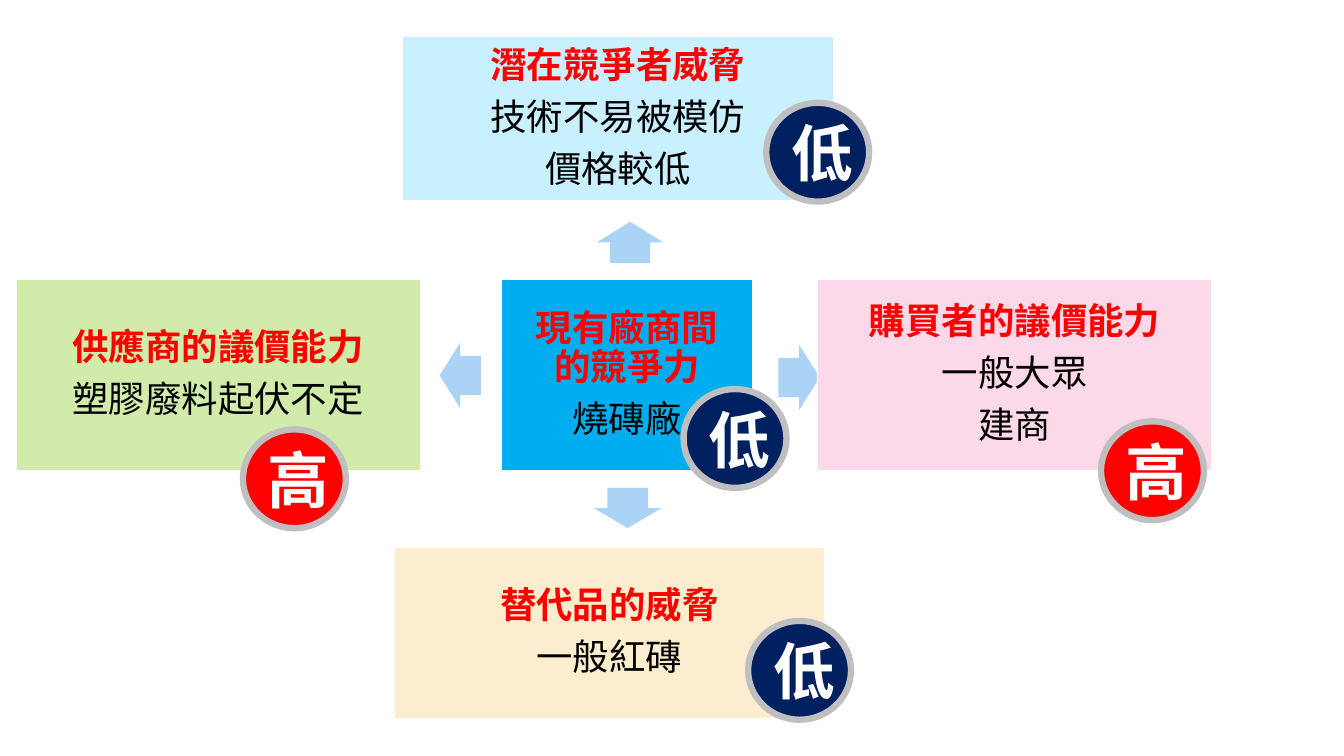
from pptx import Presentation
from pptx import util as u
from pptx.dml.color import RGBColor
from pptx.enum import shapes, text

PX = 9144  # 100 px to the inch
COLOURS = {
    "red": "FF0000", "black": "000000", "white": "FFFFFF", "navy": "002060",
    "ring": "BFBFBF", "arrow": "ABD3F6", "rivalry": "00AEEF",
    "entrants": "C9F0FF", "buyers": "FBD9E8", "substitutes": "FDEDCF",
    "suppliers": "D1EBAB",
}
SHAPE = shapes.MSO_SHAPE


def colour(name):
    return RGBColor.from_string(COLOURS[name])


def write(paragraph, words, *, size, color, bold=False, spacing=None, after=None):
    """Fill a centred paragraph with one formatted run."""
    paragraph.alignment = text.PP_ALIGN.CENTER
    paragraph.line_spacing = spacing
    paragraph.space_after = after
    run = paragraph.add_run()
    run.text = words
    run.font.name = "Karla"
    run.font.size = u.Pt(size)
    run.font.bold = bold
    run.font.color.rgb = colour(color)


class ForcesSlide:
    box_size, rating_size = 26, 44
    inset = 31 * PX
    rating_width, rating_height = 102, 98

    def __init__(self, presentation):
        self.slide = presentation.slides.add_slide(presentation.slide_layouts[6])

    def shape(self, kind, area, fill, line=None, line_width=1):
        shape = self.slide.shapes.add_shape(kind, *(value * PX for value in area))
        shape.shadow.inherit = False
        shape.fill.solid()
        shape.fill.fore_color.rgb = colour(fill)
        if line:
            shape.line.color.rgb = colour(line)
            shape.line.width = u.Pt(line_width)
        else:
            shape.line.fill.background()
        frame = shape.text_frame
        frame.word_wrap = True
        frame.vertical_anchor = text.MSO_ANCHOR.MIDDLE
        return shape

    def force(self, area, fill, heading, *details):
        frame = self.shape(SHAPE.RECTANGLE, area, fill, "white").text_frame
        frame.margin_left = frame.margin_right = self.inset
        frame.margin_top = frame.margin_bottom = self.inset
        layout = dict(size=self.box_size, spacing=0.9, after=u.Pt(9.1))
        write(frame.paragraphs[0], heading, color="red", bold=True, **layout)
        for detail in details:
            write(frame.add_paragraph(), detail, color="black", **layout)

    def arrow(self, kind, area):
        arrow = self.shape(kind, area, "arrow")
        arrow.adjustments[0] = 0.6
        arrow.adjustments[1] = 0.5

    def rating(self, left, top, level):
        area = (left, top, self.rating_width, self.rating_height)
        fill = "red" if level == "高" else "navy"
        circle = self.shape(SHAPE.OVAL, area, fill, "ring", 4.5)
        write(circle.text_frame.paragraphs[0], level,
              size=self.rating_size, color="white", bold=True)


def main():
    presentation = Presentation()
    presentation.slide_width = 1333 * PX
    presentation.slide_height = 750 * PX
    forces = ForcesSlide(presentation)

    # Rivalry in the centre, then each outer force with its arrow
    forces.force((497, 277, 250, 190), "rivalry", "現有廠商間的競爭力", "燒磚廠")
    forces.arrow(SHAPE.UP_ARROW, (592, 220, 66, 41))
    forces.force((399, 36, 428, 163), "entrants",
                 "潛在競爭者威脅", "技術不易被模仿", "價格較低")
    forces.arrow(SHAPE.RIGHT_ARROW, (772, 342, 41, 65))
    forces.force((811, 277, 391, 190), "buyers",
                 "購買者的議價能力", "一般大眾", "建商")
    forces.arrow(SHAPE.DOWN_ARROW, (589, 484, 67, 40))
    forces.force((391, 543, 427, 170), "substitutes", "替代品的威脅", "一般紅磚")
    forces.arrow(SHAPE.LEFT_ARROW, (436, 340, 41, 65))
    forces.force((16, 277, 401, 190), "suppliers",
                 "供應商的議價能力", "塑膠廢料起伏不定")

    # Strength ratings
    for left, top, level in [
        (241, 426, "高"), (1092, 418, "高"),
        (760, 102, "低"), (678, 386, "低"), (742, 616, "低"),
    ]:
        forces.rating(left, top, level)

    presentation.save("out.pptx")


if __name__ == "__main__":
    main()
